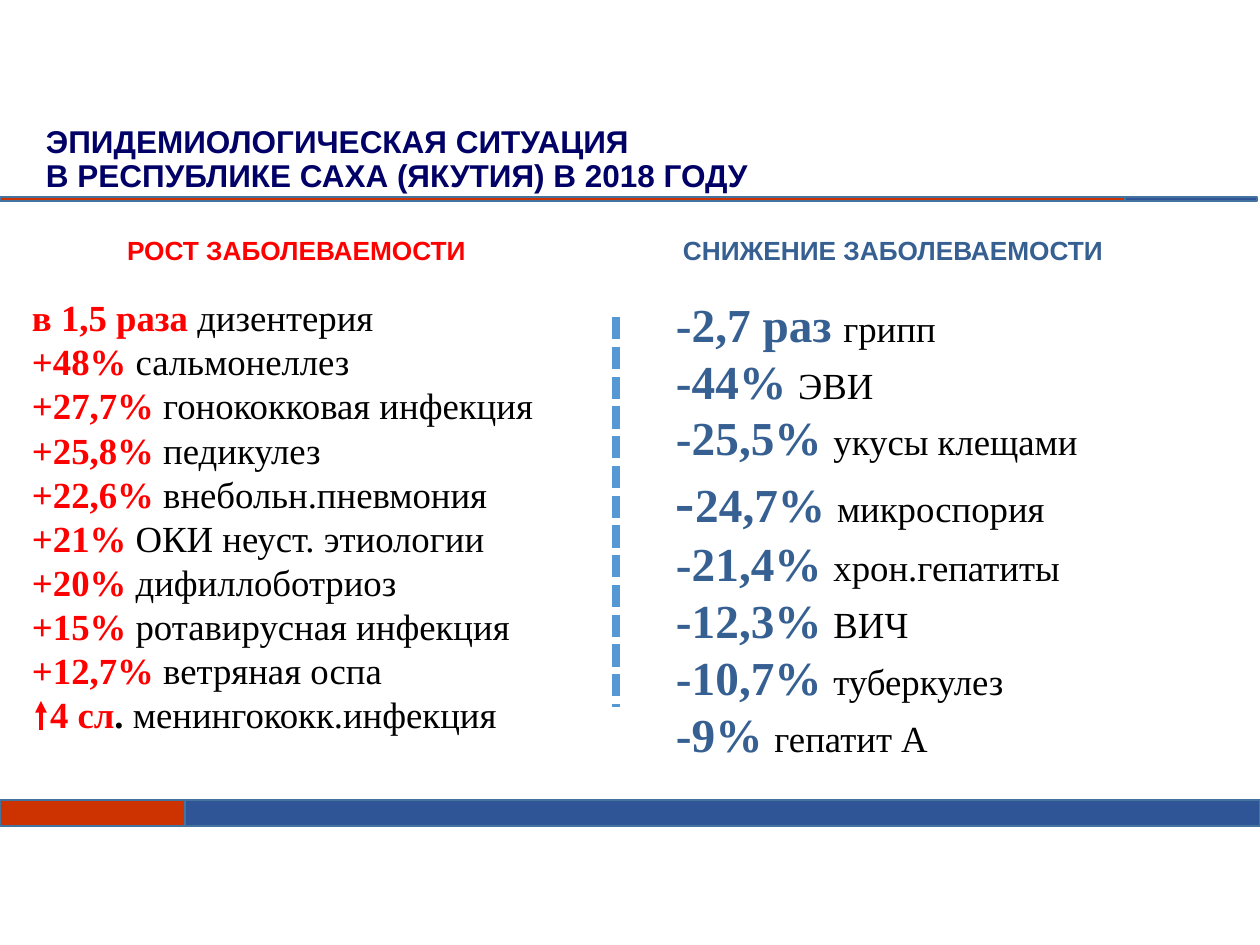
from dataclasses import dataclass

from lxml.etree import SubElement
from pptx import Presentation
from pptx.dml.color import RGBColor
from pptx.enum.dml import MSO_LINE
from pptx.enum.shapes import MSO_CONNECTOR as CONN, MSO_SHAPE as SHAPE
from pptx.enum.text import MSO_ANCHOR as ANCHOR, MSO_AUTO_SIZE as FIT, PP_ALIGN as ALIGN
from pptx.oxml.ns import qn
from pptx.util import Emu, Pt

SCALE = 914400 / 126  # EMU per px


def px(n):
    return Emu(round(n * SCALE))


@dataclass(frozen=True)
class Theme:
    sans: str = "Arial"
    serif: str = "Times New Roman"
    navy: str = "000066"
    red: str = "FF0000"
    steel: str = "376092"
    black: str = "000000"
    brick: str = "CC3300"
    blue: str = "2F5597"
    outline: str = "43739E"
    dash: str = "5698D3"
    title: int = 18
    heading: int = 15
    label: int = 21
    value: int = 27
    big: int = 33


class SlideBuilder:
    def __init__(self, slide, theme):
        self.s, self.t = slide, theme

    def font(self, name, size, color, bold=True):
        return {"name": name, "size": Pt(size), "bold": bold, "color": color}

    def run(self, p, text, fmt):
        r = p.add_run()
        r.text = text
        for key, val in fmt.items():
            if key == "color":
                r.font.color.rgb = RGBColor.from_string(val)
            else:
                setattr(r.font, key, val)

    def frame(self, idx, box, insets, anchor=ANCHOR.TOP):
        sp = self.s.placeholders[idx]
        sp.left, sp.top, sp.width, sp.height = map(px, box)
        tf = sp.text_frame
        left, top, right, bottom = map(px, insets)
        for key, val in {"margin_left": left, "margin_top": top, "margin_right": right,
                         "margin_bottom": bottom, "word_wrap": True,
                         "auto_size": FIT.NONE, "vertical_anchor": anchor}.items():
            setattr(tf, key, val)
        return tf

    def paragraph(self, tf, first, spacing=1.0, align=ALIGN.LEFT, indent=0):
        p = tf.paragraphs[0] if first else tf.add_paragraph()
        pPr = p._p.get_or_add_pPr()
        pPr.set("marL", str(px(indent)))
        pPr.set("indent", "0")
        SubElement(pPr, qn("a:buNone"))
        for key, val in {"alignment": align, "line_spacing": spacing,
                         "space_before": Pt(0), "space_after": Pt(0)}.items():
            setattr(p, key, val)
        return p

    def title(self, lines, box):
        tf = self.frame(0, box, (13, 6, 13, 6), ANCHOR.MIDDLE)
        p = self.paragraph(tf, True, 0.9)
        for i, line in enumerate(lines):
            if i:
                p.add_line_break()
            self.run(p, line, self.font(self.t.sans, self.t.title, self.t.navy))

    def heading(self, idx, text, box, color, align):
        p = self.paragraph(self.frame(idx, box, (9, 5, 9, 5)), True, align=align)
        self.run(p, text, self.font(self.t.sans, self.t.heading, color))

    def rates(self, idx, rows, box, indents=None):
        """Each row is a list of (text, size, color, bold) runs."""
        tf = self.frame(idx, box, (13, 0, 13, 13))
        for i, row in enumerate(rows):
            p = self.paragraph(tf, i == 0, indent=(indents or {}).get(i, 0))
            for text, *style in row:
                self.run(p, text, self.font(self.t.serif, *style))

    def bar(self, box, fill):
        sp = self.s.shapes.add_shape(SHAPE.RECTANGLE, *map(px, box))
        sp.shadow.inherit = False
        sp.fill.solid()
        sp.fill.fore_color.rgb = RGBColor.from_string(fill)
        sp.line.color.rgb = RGBColor.from_string(self.t.outline)
        sp.line.width = Pt(1)

    def line(self, start, end, color, width, dash=None, arrow=False):
        c = self.s.shapes.add_connector(CONN.STRAIGHT, *map(px, start + end))
        c.line.color.rgb = RGBColor.from_string(color)
        c.line.width = Pt(width)
        if dash:
            c.line.dash_style = dash
        if arrow:
            SubElement(c.line._get_or_add_ln(), qn("a:tailEnd"), type="triangle")
        SubElement(c._element.spPr, qn("a:effectLst"))


GROWTH = [
    ("в 1,5 раза ", "дизентерия"),
    ("+48% ", "сальмонеллез"),
    ("+27,7% ", "гонококковая инфекция"),
    ("+25,8% ", "педикулез"),
    ("+22,6% ", "внебольн.пневмония"),
    ("+21% ", "ОКИ неуст. этиологии"),
    ("+20% ", "дифиллоботриоз"),
    ("+15% ", "ротавирусная инфекция"),
    ("+12,7% ", "ветряная оспа"),
]
DECLINE = [
    ("-2,7 раз ", "грипп"),
    ("-44% ", "ЭВИ"),
    ("-25,5% ", "укусы клещами"),
    ("-24,7% ", "микроспория"),
    ("-21,4% ", "хрон.гепатиты"),
    ("-12,3% ", "ВИЧ"),
    ("-10,7% ", "туберкулез"),
    ("-9% ", "гепатит А"),
]


def main():
    prs = Presentation()
    prs.slide_width, prs.slide_height = px(1260), px(945)
    t = Theme()
    b = SlideBuilder(prs.slides.add_slide(prs.slide_layouts[4]), t)

    # Title and its underline
    b.title(["ЭПИДЕМИОЛОГИЧЕСКАЯ СИТУАЦИЯ ", "В РЕСПУБЛИКЕ САХА (ЯКУТИЯ) В 2018 ГОДУ"],
            (33, 121, 1173, 79))
    b.bar((0, 197, 1140, 4), t.brick)
    b.bar((1125, 197, 132, 4), t.blue)

    # Column headings
    b.heading(1, "РОСТ ЗАБОЛЕВАЕМОСТИ", (46, 229, 501, 55), t.red, ALIGN.CENTER)
    b.heading(3, "СНИЖЕНИЕ ЗАБОЛЕВАЕМОСТИ", (674, 229, 490, 55), t.steel, ALIGN.LEFT)

    # Growing rates; the last row leaves room for the arrow
    growth = [[(value, t.label, t.red, True), (name, t.label, t.black, False)]
              for value, name in GROWTH]
    growth.append([("4 сл", t.label, t.red, True), (". ", t.label, t.black, True),
                   ("менингококк.инфекция", t.label, t.black, False)])
    b.rates(2, growth, (19, 295, 586, 406), {len(GROWTH): 18})
    b.line((41, 730), (41, 701), t.red, 2.25, arrow=True)

    # Falling rates; one row has a larger minus sign
    decline = [[(value, t.value, t.steel, True), (name, t.label, t.black, False)]
               for value, name in DECLINE]
    decline[3][:1] = [("-", t.big, t.steel, True), ("24,7% ", t.value, t.steel, True)]
    b.rates(4, decline, (663, 295, 501, 354))

    # Column divider
    b.line((616, 317), (616, 707), t.dash, 4.25, MSO_LINE.SQUARE_DOT)

    # Footer band
    b.bar((0, 800, 185, 26), t.brick)
    b.bar((185, 800, 1075, 26), t.blue)

    prs.save("out.pptx")


if __name__ == "__main__":
    main()
